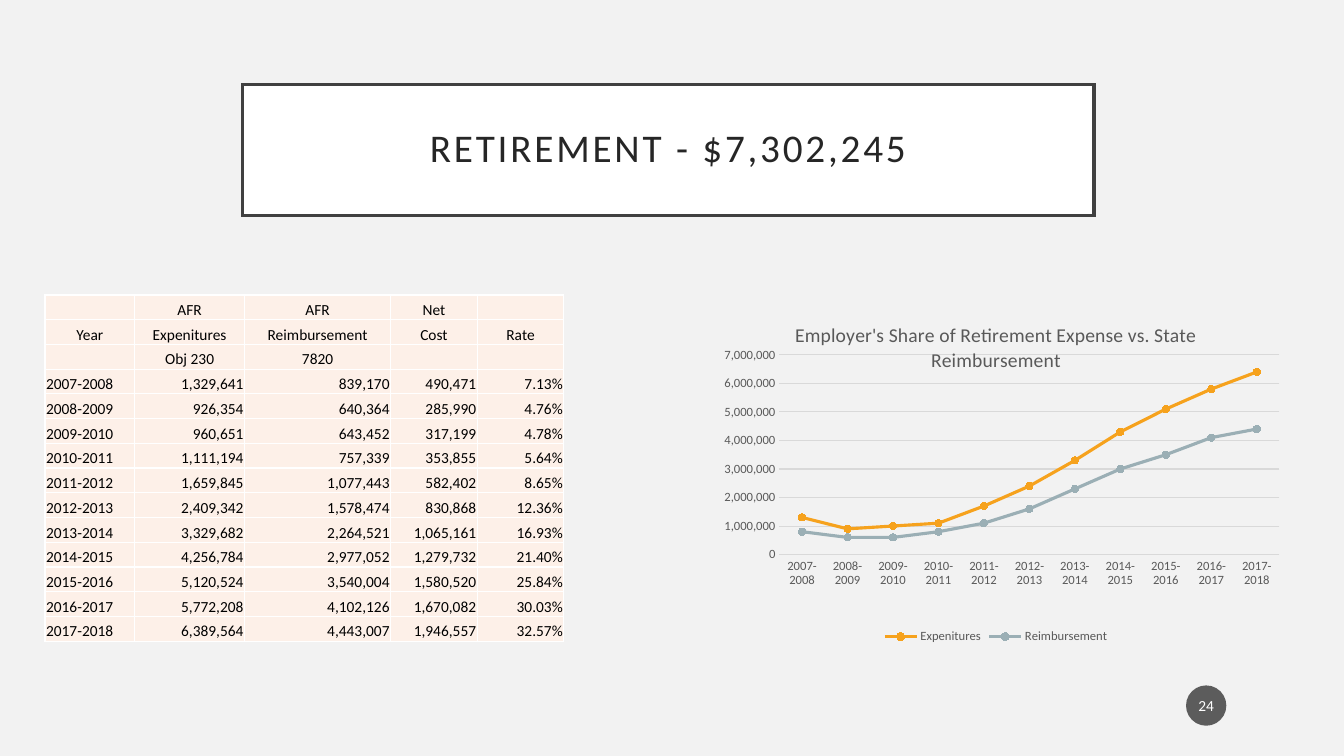
from lxml.etree import SubElement
from pptx import Presentation
from pptx.chart.data import CategoryChartData
from pptx.dml.color import RGBColor
from pptx.enum.chart import XL_CHART_TYPE as CT, XL_LEGEND_POSITION as LP
from pptx.enum.chart import XL_MARKER_STYLE as MS, XL_TICK_MARK as TM
from pptx.enum.shapes import MSO_SHAPE as SH
from pptx.enum.text import MSO_ANCHOR as VA, PP_ALIGN as AL
from pptx.oxml import parse_xml
from pptx.oxml.ns import nsdecls, qn
from pptx.util import Pt

COLORS = {
    "bg": "F2F2F2", "white": "FFFFFF", "border": "404040", "title": "262626",
    "cell": "FDF0E8", "black": "000000", "muted": "595959", "grid": "D9D9D9",
    "expense": "F6A21D", "reimbursed": "9BAFB5", "badge": "1D1D1D",
}
FONT = "Calibri"
HEADERS = [
    ("", "AFR", "AFR", "Net", ""),
    ("Year", "Expenitures", "Reimbursement", "Cost", "Rate"),
    ("", "Obj 230", "7820", "", ""),
]
YEARS = [
    (2007, 1329641, 839170, 7.13),
    (2008, 926354, 640364, 4.76),
    (2009, 960651, 643452, 4.78),
    (2010, 1111194, 757339, 5.64),
    (2011, 1659845, 1077443, 8.65),
    (2012, 2409342, 1578474, 12.36),
    (2013, 3329682, 2264521, 16.93),
    (2014, 4256784, 2977052, 21.40),
    (2015, 5120524, 3540004, 25.84),
    (2016, 5772208, 4102126, 30.03),
    (2017, 6389564, 4443007, 32.57),
]
COL_WIDTHS = [64.1, 78.5, 104.4, 61.9, 61.9]


def rgb(name):
    return RGBColor.from_string(COLORS[name])


def set_attrs(obj, **values):
    for key, value in values.items():
        setattr(obj, key, value)


def set_font(font, size, color):
    set_attrs(font, name=FONT, size=Pt(size), bold=False)
    font.color.rgb = rgb(color)


def set_fill(obj, color):
    obj.fill.solid()
    obj.fill.fore_color.rgb = rgb(color)


def set_line(line, color, width):
    line.color.rgb = rgb(color)
    line.width = Pt(width)


def set_margins(obj, left, top, right, bottom):
    set_attrs(obj, margin_left=Pt(left), margin_top=Pt(top),
              margin_right=Pt(right), margin_bottom=Pt(bottom))


def school_year(start):
    return f"{start}-{start + 1}"


def add_title(s, x, y, w, h):
    sp = s.shapes.title
    set_attrs(sp, left=Pt(x), top=Pt(y), width=Pt(w), height=Pt(h))
    set_fill(sp, "white")
    set_line(sp.line, "border", 2.5)
    SubElement(sp._element.spPr.find(qn("a:ln")), qn("a:miter")).set("lim", "800000")
    tf = sp.text_frame
    set_attrs(tf, vertical_anchor=VA.MIDDLE, word_wrap=True)
    set_margins(tf, 14.4, 14.4, 14.4, 14.4)
    p = tf.paragraphs[0]
    set_attrs(p, alignment=AL.CENTER, line_spacing=0.9)
    r = p.add_run()
    r.text = "RETIREMENT - $7,302,245"
    set_font(r.font, 28, "title")
    r.font._element.set("spc", "200")


def format_cell(cell, text, align):
    set_fill(cell, "cell")
    set_margins(cell, 0.7, 0.7, 0.7, 0)
    cell.vertical_anchor = VA.BOTTOM
    p = cell.text_frame.paragraphs[0]
    p.alignment = align
    if text:
        r = p.add_run()
        r.text = text
        set_font(r.font, 11, "black")
    else:
        SubElement(p._p, qn("a:endParaRPr")).set("sz", "1100")
    props = cell._tc.get_or_add_tcPr()
    for i, side in enumerate(("lnL", "lnR", "lnT", "lnB")):
        props.insert(i, parse_xml(
            f'<a:{side} {nsdecls("a")} w="12700"><a:solidFill>'
            f'<a:srgbClr val="{COLORS["white"]}"/></a:solidFill></a:{side}>'))


def add_cost_table(s, x, y, w, h):
    rows = [(row, [AL.CENTER] * 5) for row in HEADERS]
    for start, spent, repaid, rate in YEARS:
        amounts = [f"{n:,}" for n in (spent, repaid, spent - repaid)]
        rows.append(([school_year(start), *amounts, f"{rate:.2f}%"],
                     [AL.LEFT] + [AL.RIGHT] * 4))
    table = s.shapes.add_table(len(rows), 5, Pt(x), Pt(y), Pt(w), Pt(h)).table
    set_attrs(table, first_row=False, horz_banding=False)
    for col, width in zip(table.columns, COL_WIDTHS):
        col.width = Pt(w * width / sum(COL_WIDTHS))
    for i, (texts, aligns) in enumerate(rows):
        table.rows[i].height = Pt(h / len(rows))
        for j, (text, align) in enumerate(zip(texts, aligns)):
            format_cell(table.cell(i, j), text, align)


def set_plot_layout(chart, x, y, w, h):
    area = chart._chartSpace.chart.plotArea
    for old in area.findall(qn("c:layout")):
        area.remove(old)
    area.insert(0, parse_xml(
        f'<c:layout {nsdecls("c")}><c:manualLayout><c:layoutTarget val="inner"/>'
        '<c:xMode val="edge"/><c:yMode val="edge"/>'
        f'<c:x val="{x}"/><c:y val="{y}"/><c:w val="{w}"/><c:h val="{h}"/>'
        '</c:manualLayout></c:layout>'))


def add_expense_chart(s, x, y, w, h):
    data = CategoryChartData(number_format="#,##0")
    data.categories = [school_year(row[0]) for row in YEARS]
    for i, name in enumerate(("Expenitures", "Reimbursement"), 1):
        data.add_series(name, [round(row[i], -5) for row in YEARS])
    chart = s.shapes.add_chart(CT.LINE_MARKERS, Pt(x), Pt(y), Pt(w), Pt(h), data).chart
    set_font(chart.font, 10, "black")
    set_attrs(chart, has_title=True, has_legend=True)
    r = chart.chart_title.text_frame.paragraphs[0].add_run()
    r.text = "Employer's Share of Retirement Expense vs. State Reimbursement"
    set_font(r.font, 14, "muted")
    set_attrs(chart.legend, position=LP.BOTTOM, include_in_layout=False)
    set_font(chart.legend.font, 9, "muted")
    for axis in (chart.category_axis, chart.value_axis):
        set_attrs(axis, major_tick_mark=TM.NONE, minor_tick_mark=TM.NONE)
        set_font(axis.tick_labels.font, 9, "muted")
    set_line(chart.category_axis.format.line, "grid", 0.75)
    values = chart.value_axis
    set_attrs(values, minimum_scale=0, maximum_scale=7000000, major_unit=1000000,
              has_major_gridlines=True)
    values.format.line.fill.background()
    set_line(values.major_gridlines.format.line, "grid", 0.75)
    set_attrs(values.tick_labels, number_format="#,##0", number_format_is_linked=False)
    chart.plots[0].vary_by_categories = False
    for series, color in zip(chart.plots[0].series, ("expense", "reimbursed")):
        series.smooth = False
        set_line(series.format.line, color, 2.25)
        set_attrs(series.marker, style=MS.CIRCLE, size=5)
        set_fill(series.marker.format, color)
        set_line(series.marker.format.line, color, 0.75)
    set_plot_layout(chart, 61.3 / w, 34.9 / h, 357.3 / w, 142.7 / h)


def add_page_badge(s, x, y, w, h):
    sp = s.shapes.add_shape(SH.OVAL, Pt(x), Pt(y), Pt(w), Pt(h))
    sp.shadow.inherit = False
    set_fill(sp, "badge")
    color = sp._element.spPr.find(qn("a:solidFill"))[0]
    SubElement(color, qn("a:alpha")).set("val", "70000")
    sp.line.fill.background()
    tf = sp.text_frame
    set_attrs(tf, vertical_anchor=VA.MIDDLE, word_wrap=True)
    set_margins(tf, 1.4, 3.6, 1.4, 3.6)
    p = tf.paragraphs[0]
    p.alignment = AL.CENTER
    r = p.add_run()
    r.text = "24"
    set_font(r.font, 11, "white")


def main():
    prs = Presentation()
    set_attrs(prs, slide_width=Pt(960), slide_height=Pt(540))
    s = prs.slides.add_slide(prs.slide_layouts[5])
    set_fill(s.background, "bg")
    add_title(s, 173.1, 60.5, 608.4, 93.6)
    add_cost_table(s, 32.2, 210.7, 370.6, 247.6)
    add_expense_chart(s, 495.4, 218.6, 432, 244.3)
    add_page_badge(s, 847.2, 489.6, 28.8, 28.8)
    prs.save("out.pptx")


if __name__ == "__main__":
    main()
